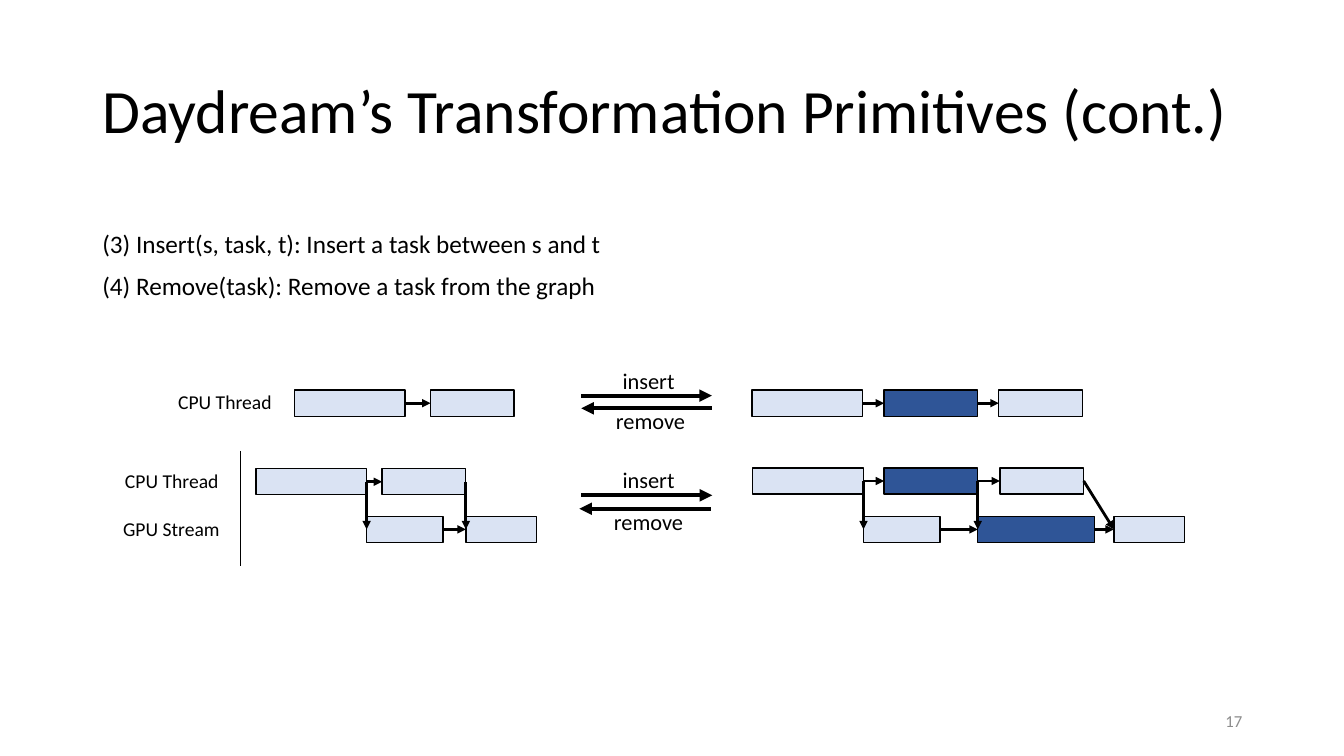
from dataclasses import dataclass

from lxml.etree import SubElement
from pptx import Presentation
from pptx.dml.color import RGBColor
from pptx.enum.shapes import MSO_CONNECTOR, MSO_SHAPE
from pptx.enum.text import MSO_ANCHOR, PP_ALIGN
from pptx.oxml.ns import qn
from pptx.shapes.autoshape import Shape
from pptx.shapes.connector import Connector
from pptx.shapes.shapetree import SlideShapes
from pptx.util import Cm, Pt

BLACK, GRAY, LIGHT, DARK = "000000", "8C8C8C", "DAE3F3", "2F5597"
LEFT, MID, RIGHT = PP_ALIGN.LEFT, PP_ALIGN.CENTER, PP_ALIGN.RIGHT
HIGH = 0.66


@dataclass(frozen=True)
class Label:
    text: str
    left: float
    top: float
    width: float
    height: float
    size: int
    align: PP_ALIGN = LEFT
    color: str = BLACK
    anchor: MSO_ANCHOR = MSO_ANCHOR.TOP
    wrap: bool = True
    space: float = 1.0


@dataclass(frozen=True)
class Task:
    name: str
    left: float
    mid: float
    width: float
    fill: str = LIGHT


@dataclass(frozen=True)
class Link:
    start: str
    end: str


@dataclass(frozen=True)
class Stroke:
    left: float
    top: float
    right: float
    bottom: float
    weight: float = 3
    arrow: bool = True


LABELS = [
    Label("Daydream’s Transformation Primitives (cont.)", 2.33, 1.02, 29.21, 3.68, 44,
          anchor=MSO_ANCHOR.MIDDLE, space=0.9),
    Label("17", 23.94, 17.66, 7.62, 1.01, 12, RIGHT, GRAY, MSO_ANCHOR.MIDDLE),
    Label("(3) Insert(s, task, t): Insert a task between s and t",
          2.33, 5.64, 13.21, 1.02, 18, wrap=False),
    Label("(4) Remove(task): Remove a task from the graph",
          2.33, 6.69, 13.08, 1.02, 18, wrap=False),
    Label("CPU Thread", 3.88, 9.71, 3.22, 0.86, 14, RIGHT),
    Label("CPU Thread", 2.54, 11.69, 3.22, 0.86, 14, RIGHT),
    Label("GPU Stream", 2.33, 12.89, 3.46, 0.86, 14, RIGHT),
    Label("insert", 15.04, 9.13, 2.61, 0.94, 16, MID),
    Label("remove", 15.09, 10.14, 2.61, 0.94, 16, MID),
    Label("insert", 15.04, 11.62, 2.61, 0.94, 16, MID),
    Label("remove", 15.04, 12.67, 2.61, 0.94, 16, MID),
]

TASKS = [
    Task("one s", 7.42, 10.16, 2.79),
    Task("one t", 10.85, 10.16, 2.11),
    Task("one new s", 18.95, 10.16, 2.79),
    Task("one new task", 22.28, 10.16, 2.36, DARK),
    Task("one new t", 25.17, 10.16, 2.11),
    Task("cpu s", 6.45, 12.14, 2.79),
    Task("cpu t", 9.63, 12.14, 2.11),
    Task("gpu s", 9.24, 13.34, 1.93),
    Task("gpu t", 11.74, 13.34, 1.78),
    Task("cpu new s", 18.97, 12.12, 2.79),
    Task("cpu new task", 22.28, 12.12, 2.36, DARK),
    Task("cpu new t", 25.2, 12.12, 2.11),
    Task("gpu new s", 21.76, 13.34, 1.93),
    Task("gpu new task", 24.64, 13.34, 2.95, DARK),
    Task("gpu new t", 28.07, 13.34, 1.78),
]

LINKS = [
    Link("one s", "one t"),
    Link("one new s", "one new task"),
    Link("one new task", "one new t"),
    Link("cpu s", "cpu t"),
    Link("gpu s", "gpu t"),
    Link("cpu s", "gpu s"),
    Link("cpu t", "gpu t"),
    Link("cpu new s", "cpu new task"),
    Link("cpu new task", "cpu new t"),
    Link("gpu new s", "gpu new task"),
    Link("gpu new task", "gpu new t"),
    Link("cpu new s", "gpu new s"),
    Link("cpu new task", "gpu new task"),
    Link("cpu new t", "gpu new t"),
]

STROKES = [
    Stroke(14.65, 9.97, 17.94, 9.97),
    Stroke(17.94, 10.29, 14.65, 10.29),
    Stroke(14.65, 12.48, 17.95, 12.48),
    Stroke(17.91, 12.82, 14.6, 12.82),
    Stroke(6.06, 11.36, 6.06, 14.27, 0.5, False),
]


def paint(code: str) -> RGBColor:
    return RGBColor.from_string(code)


def add_label(shapes: SlideShapes, label: Label) -> None:
    box = shapes.add_textbox(Cm(label.left), Cm(label.top), Cm(label.width), Cm(label.height))
    frame = box.text_frame
    frame.word_wrap = label.wrap
    frame.vertical_anchor = label.anchor
    para = frame.paragraphs[0]
    para.alignment = label.align
    para.line_spacing = label.space
    run = para.add_run()
    run.text = label.text
    run.font.name = "Calibri"
    run.font.size = Pt(label.size)
    run.font.color.rgb = paint(label.color)


def add_task(shapes: SlideShapes, task: Task) -> Shape:
    box = shapes.add_shape(MSO_SHAPE.RECTANGLE, Cm(task.left), Cm(task.mid - HIGH / 2),
                           Cm(task.width), Cm(HIGH))
    box.shadow.inherit = False
    box.fill.solid()
    box.fill.fore_color.rgb = paint(task.fill)
    box.line.color.rgb = paint(BLACK)
    box.line.width = Pt(1)
    return box


def add_stroke(shapes: SlideShapes, stroke: Stroke) -> Connector:
    line = shapes.add_connector(MSO_CONNECTOR.STRAIGHT, Cm(stroke.left), Cm(stroke.top),
                                Cm(stroke.right), Cm(stroke.bottom))
    line.line.color.rgb = paint(BLACK)
    line.line.width = Pt(stroke.weight)
    props = line._element.spPr
    if stroke.arrow:
        SubElement(props.find(qn("a:ln")), qn("a:tailEnd"), type="triangle")
    SubElement(props, qn("a:effectLst"))
    return line


def add_link(shapes: SlideShapes, start: Shape, end: Shape) -> None:
    line = add_stroke(shapes, Stroke(0, 0, 1, 1, 2))
    line.begin_connect(start, 3)
    line.end_connect(end, 1)


def main() -> None:
    deck = Presentation()
    deck.slide_width, deck.slide_height = Cm(33.87), Cm(19.05)
    shapes = deck.slides.add_slide(deck.slide_layouts[6]).shapes
    for label in LABELS:
        add_label(shapes, label)
    boxes = {task.name: add_task(shapes, task) for task in TASKS}
    for link in LINKS:
        add_link(shapes, boxes[link.start], boxes[link.end])
    for stroke in STROKES:
        add_stroke(shapes, stroke)
    deck.save("out.pptx")


if __name__ == "__main__":
    main()
